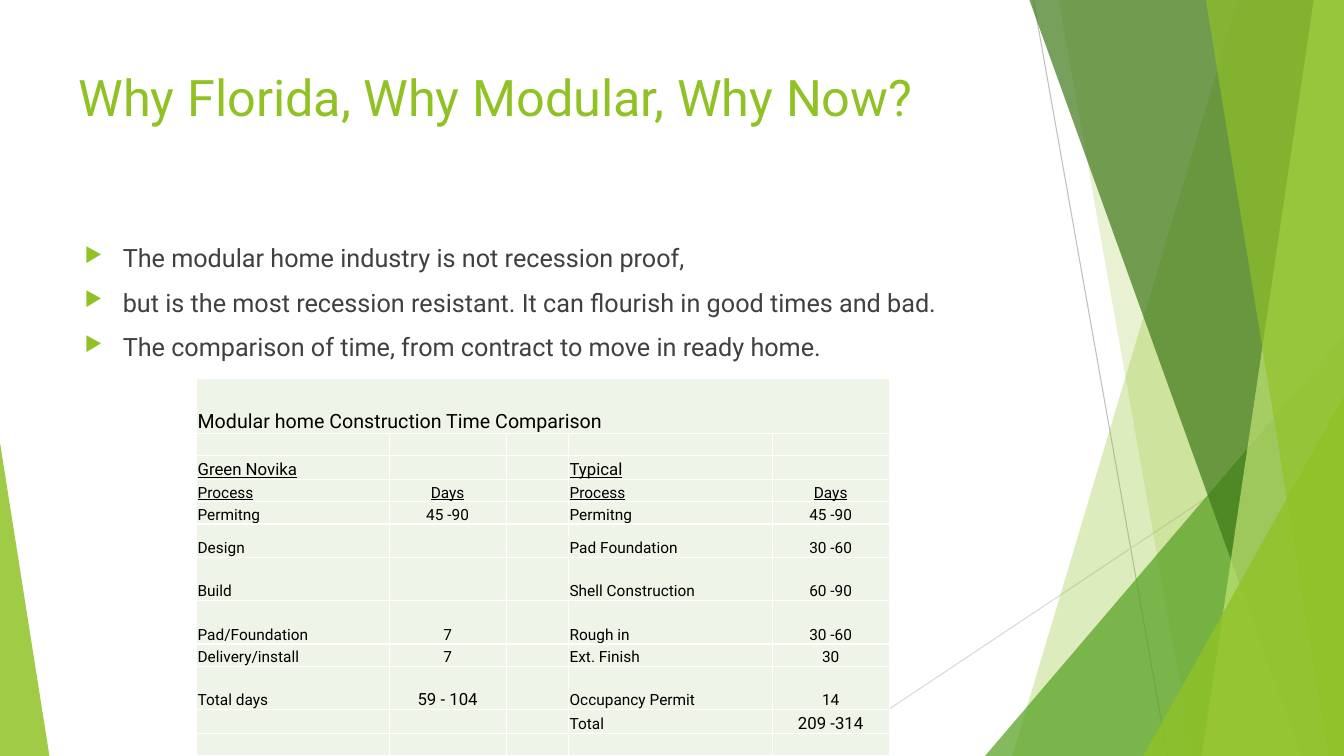
from lxml.etree import SubElement
from pptx import Presentation
from pptx.dml.color import RGBColor
from pptx.enum.shapes import MSO_CONNECTOR, MSO_SHAPE
from pptx.enum.text import MSO_ANCHOR, PP_ALIGN
from pptx.oxml.ns import qn
from pptx.util import Inches, Pt

WIDTH, HEIGHT = 13.33, 7.5
FONT = "Roboto"
GREEN, BLACK, GREY, WHITE, PALE = "90C226", "000000", "404040", "FFFFFF", "EEF4E8"

TITLE = "Why Florida, Why Modular, Why Now?"
POINTS = [
    "The modular home industry is not recession proof,",
    "but is the most recession resistant. It can flourish in good times and bad.",
    "The comparison of time, from contract to move in ready home.",
]
TABLE_TITLE = "Modular home Construction Time Comparison"
SCHEDULE = [
    ("", "", "", "", ""),
    ("Green Novika", "", "", "Typical", ""),
    ("Process", "Days", "", "Process", "Days"),
    ("Permitng", "45 -90", "", "Permitng", "45 -90"),
    ("Design", "", "", "Pad Foundation", "30 -60"),
    ("Build", "", "", "Shell Construction", "60 -90"),
    ("Pad/Foundation", "7", "", "Rough in", "30 -60"),
    ("Delivery/install", "7", "", "Ext. Finish", "30"),
    ("Total days", "59 - 104", "", "Occupancy Permit", "14"),
    ("", "", "", "Total", "209 -314"),
    ("", "", "", "", ""),
]
LARGER = {"Green Novika", "Typical", "59 - 104", "209 -314"}
UNDERLINED = {"Green Novika", "Typical", "Process", "Days"}
COLUMNS = [1.91, 1.16, 0.62, 2.02, 1.16]
ROWS = [0.55, 0.22, 0.24, 0.22, 0.22, 0.33, 0.43, 0.43, 0.22, 0.43, 0.24, 0.22]
CENTRED_COLUMNS = (1, 4)

RAYS = [
    ((10.25, 0), (11.58, HEIGHT), "BFBFBF"),
    ((WIDTH, 4.03), (8.12, HEIGHT), "D9D9D9"),
]
# Each facet: ("band", top x, bottom x) or ("triangle", left, width, height, apex)
FACETS = [
    ("band", (12.28, 10.04), GREEN, 30),
    ("band", (10.5, 11.83), GREEN, 20),
    ("triangle", (9.77, 3.56, 4.17, 1), "54A021", 72),
    ("band", (10.21, 12.91), "3F7819", 70),
    ("band", (13.03, 11.92), "C0E474", 70),
    ("band", (11.96, 13.18), GREEN, 65),
    ("triangle", (11.34, 1.99, 3.57, 1), GREEN, 80),
    ("triangle", (0, 0.49, 3.11, 0), GREEN, 85),
]


def assign(target, formats):
    for name, value in formats.items():
        setattr(target, name, value)


def paint(fill, color, opacity=100):
    fill.solid()
    fill.fore_color.rgb = RGBColor.from_string(color)
    if opacity < 100:
        tint = fill._xPr.find(qn("a:solidFill"))[0]
        SubElement(tint, qn("a:alpha"), val=str(opacity * 1000))


def write(para, text, size, color, underline=None):
    span = para.add_run()
    span.text = text
    assign(span.font, {"name": FONT, "size": Pt(size), "underline": underline})
    paint(span.font.fill, color)


def add_ray(page, start, end, color):
    ends = [Inches(value) for value in start + end]
    ray = page.shapes.add_connector(MSO_CONNECTOR.STRAIGHT, *ends)
    ray.line.width = Pt(0.75)
    paint(ray.line.fill, color)
    SubElement(ray._element.spPr, qn("a:effectLst"))


def add_facet(page, kind, measures, color, opacity):
    if kind == "band":
        top, bottom = measures
        corners = [(WIDTH, 0), (WIDTH, HEIGHT), (bottom, HEIGHT)]
        builder = page.shapes.build_freeform(Inches(top), 0, scale=1.0)
        builder.add_line_segments([(Inches(x), Inches(y)) for x, y in corners])
        facet = builder.convert_to_shape()
    else:
        left, width, height, apex = measures
        frame = [Inches(value) for value in (left, HEIGHT - height, width, height)]
        facet = page.shapes.add_shape(MSO_SHAPE.ISOSCELES_TRIANGLE, *frame)
        facet.adjustments[0] = apex
    facet.shadow.inherit = False
    facet.line.fill.background()
    paint(facet.fill, color, opacity)


def add_text(page, frame, lines, size, color):
    box = page.shapes.add_textbox(*[Inches(value) for value in frame])
    box.text_frame.word_wrap = True
    for number, line in enumerate(lines):
        para = box.text_frame.add_paragraph() if number else box.text_frame.paragraphs[0]
        write(para, line, size, color)
    return box.text_frame.paragraphs


def add_bullet(para):
    para.space_before = Pt(10)
    layout = para._p.get_or_add_pPr()
    layout.set("marL", str(Inches(0.38)))
    layout.set("indent", str(-Inches(0.38)))
    SubElement(SubElement(layout, qn("a:buClr")), qn("a:srgbClr"), val=GREEN)
    SubElement(layout, qn("a:buSzPct"), val="80000")
    SubElement(layout, qn("a:buChar"), char="▶")


def fill_cell(cell, text, size, centred):
    inset = Inches(0.01)
    assign(cell, {"vertical_anchor": MSO_ANCHOR.BOTTOM, "margin_left": inset,
                  "margin_right": inset, "margin_top": inset, "margin_bottom": 0})
    for side in ("lnL", "lnR", "lnT", "lnB"):
        border = SubElement(cell._tc.get_or_add_tcPr(), qn("a:" + side), w=str(Pt(1)))
        SubElement(SubElement(border, qn("a:solidFill")), qn("a:srgbClr"), val=WHITE)
    paint(cell.fill, PALE)
    para = cell.text_frame.paragraphs[0]
    para.alignment = PP_ALIGN.CENTER if centred else PP_ALIGN.LEFT
    if text:
        write(para, text, size, BLACK, text in UNDERLINED)
    else:
        SubElement(para._p, qn("a:endParaRPr"), sz=str(size * 100))


def add_schedule(page):
    frame = [Inches(value) for value in (1.95, 3.75, sum(COLUMNS), sum(ROWS))]
    table = page.shapes.add_table(len(ROWS), len(COLUMNS), *frame).table
    assign(table, {"first_row": False, "horz_banding": False})
    for column, width in zip(table.columns, COLUMNS):
        column.width = Inches(width)
    for row, height in zip(table.rows, ROWS):
        row.height = Inches(height)
    heading = (TABLE_TITLE,) + ("",) * (len(COLUMNS) - 1)
    for row, texts in enumerate([heading] + SCHEDULE):
        for column, text in enumerate(texts):
            size = 14 if text == TABLE_TITLE else 12 if text in LARGER else 11
            fill_cell(table.cell(row, column), text, size, column in CENTRED_COLUMNS)
    table.cell(0, 0).merge(table.cell(0, len(COLUMNS) - 1))


def main():
    """Build the modular home slide and save it."""
    deck = Presentation()
    assign(deck, {"slide_width": Inches(WIDTH), "slide_height": Inches(HEIGHT)})
    page = deck.slides.add_slide(deck.slide_layouts[6])
    for ray in RAYS:
        add_ray(page, *ray)
    for facet in FACETS:
        add_facet(page, *facet)
    add_text(page, (0.68, 0.61, 9.4, 1.44), [TITLE], 36, GREEN)
    for para in add_text(page, (0.74, 2.36, 9.4, 4.24), POINTS, 18, GREY):
        add_bullet(para)
    add_schedule(page)
    deck.save("out.pptx")


if __name__ == "__main__":
    main()
